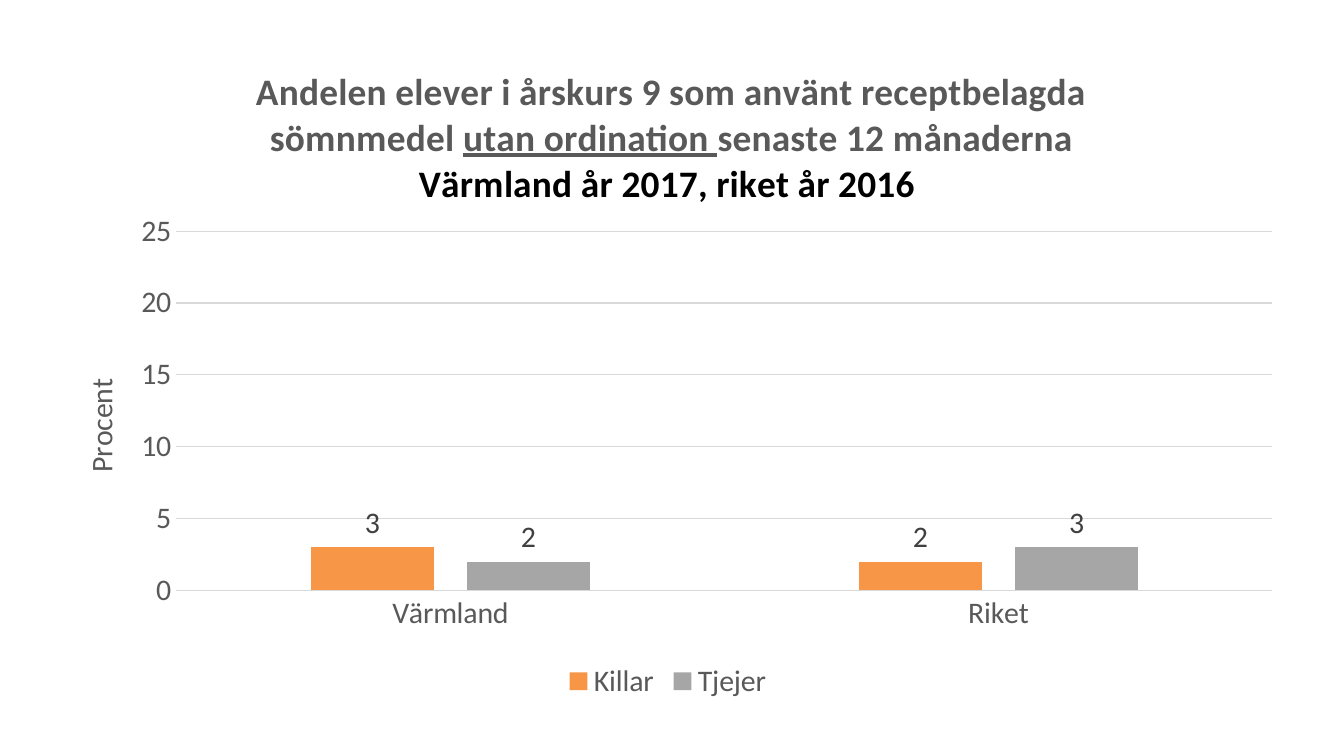
from dataclasses import dataclass

from pptx import Presentation
from pptx.chart.data import CategoryChartData
from pptx.dml.color import RGBColor
from pptx.enum.chart import (
    XL_CHART_TYPE, XL_LABEL_POSITION, XL_LEGEND_POSITION, XL_TICK_MARK)
from pptx.oxml.ns import qn
from pptx.util import Emu, Pt
from lxml import etree

CLUSTERED = XL_CHART_TYPE.COLUMN_CLUSTERED
OUTSIDE_END = XL_LABEL_POSITION.OUTSIDE_END
LEGEND_BOTTOM = XL_LEGEND_POSITION.BOTTOM
NO_TICK = XL_TICK_MARK.NONE
EMU_PER_PX = 9525


@dataclass(frozen=True)
class Theme:
    font: str = "Calibri"
    heading: str = "595959"
    subtitle: str = "000000"
    label: str = "404040"
    grid: str = "D9D9D9"
    title_size: int = 20
    text_size: int = 16
    line_width: float = 0.75


THEME = Theme()
REGIONS = ("Värmland", "Riket")
SERIES = (("Killar", (3, 2), "F79646"), ("Tjejer", (2, 3), "A6A6A6"))
HEADING_PARTS = (
    ("Andelen elever i årskurs 9 som använt receptbelagda sömnmedel ", False),
    ("utan ordination ", True),
    ("senaste 12 månaderna", False),
)
SUBTITLE = "Värmland år 2017, riket år 2016 "


def px(length):
    return Emu(length * EMU_PER_PX)


def style_font(font, color=THEME.heading, size=THEME.text_size, bold=False):
    font.name = THEME.font
    font.size = Pt(size)
    font.bold = bold
    font.color.rgb = RGBColor.from_string(color)


def style_line(line):
    line.width = Pt(THEME.line_width)
    line.color.rgb = RGBColor.from_string(THEME.grid)


def place(element, **fractions):
    """Fix a chart part at fractions (x, y, w, h) of the chart area."""
    for old in element.findall(qn("c:layout")):
        element.remove(old)
    layout = etree.Element(qn("c:layout"))
    manual = etree.SubElement(layout, qn("c:manualLayout"))
    settings = {"xMode": "edge", "yMode": "edge", **fractions}
    if "w" in fractions:
        settings = {"layoutTarget": "inner", **settings}
    for tag, value in settings.items():
        etree.SubElement(manual, qn(f"c:{tag}")).set("val", str(value))
    text = element.find(qn("c:tx"))
    element.insert(0 if text is None else element.index(text) + 1, layout)


def add_title(chart):
    chart.has_title = True
    frame = chart.chart_title.text_frame
    heading = frame.paragraphs[0]
    style_font(heading.font, THEME.heading, THEME.title_size, True)
    for words, underlined in HEADING_PARTS:
        run = heading.add_run()
        run.text = words
        style_font(run.font, THEME.heading, THEME.title_size, True)
        run.font.underline = underlined
    subtitle = frame.add_paragraph()
    subtitle.text = SUBTITLE
    style_font(subtitle.runs[0].font, THEME.subtitle, THEME.title_size, True)
    chart.chart_title.include_in_layout = False
    place(chart.chart_title._element, x=0.17, y=0.05)


def style_axes(chart):
    regions, percent = chart.category_axis, chart.value_axis
    for axis in (regions, percent):
        axis.major_tick_mark = axis.minor_tick_mark = NO_TICK
        style_font(axis.tick_labels.font)
    style_line(regions.format.line)
    percent.format.line.fill.background()
    percent.minimum_scale, percent.maximum_scale = 0, 25
    percent.major_unit = 5
    percent.has_major_gridlines = True
    style_line(percent.major_gridlines.format.line)

    title = percent.axis_title
    title.text_frame.text = "Procent"
    style_font(title.text_frame.paragraphs[0].runs[0].font)
    body = title._element.find(".//" + qn("a:bodyPr"))
    body.set("rot", "-5400000")
    body.set("vert", "horz")
    place(title._element, x=0.03, y=0.51)


def style_columns(chart):
    plot = chart.plots[0]
    plot.gap_width, plot.overlap = 219, -27
    plot.vary_by_categories = False
    for series, (_, _, color) in zip(plot.series, SERIES):
        series.format.fill.solid()
        series.format.fill.fore_color.rgb = RGBColor.from_string(color)
        labels = series.data_labels
        labels.show_value = True
        labels.position = OUTSIDE_END
        style_font(labels.font, THEME.label)


def add_legend(chart):
    chart.has_legend = True
    chart.legend.position = LEGEND_BOTTOM
    chart.legend.include_in_layout = False
    style_font(chart.legend.font)


def add_column_chart(slide):
    data = CategoryChartData()
    data.categories = REGIONS
    for name, values, _ in SERIES:
        data.add_series(name, values)
    chart = slide.shapes.add_chart(
        CLUSTERED, px(27), px(20), px(900), px(484), data).chart
    chart.font.name = THEME.font
    chart.font.size = Pt(THEME.text_size)
    add_title(chart)
    style_axes(chart)
    style_columns(chart)
    add_legend(chart)
    plot_area = chart._chartSpace.find(".//" + qn("c:plotArea"))
    place(plot_area, x=0.11, y=0.3, w=0.87, h=0.53)


def main():
    deck = Presentation()
    deck.slide_width, deck.slide_height = px(960), px(540)
    slide = deck.slides.add_slide(deck.slide_layouts[6])
    add_column_chart(slide)
    deck.save("out.pptx")


if __name__ == "__main__":
    main()
